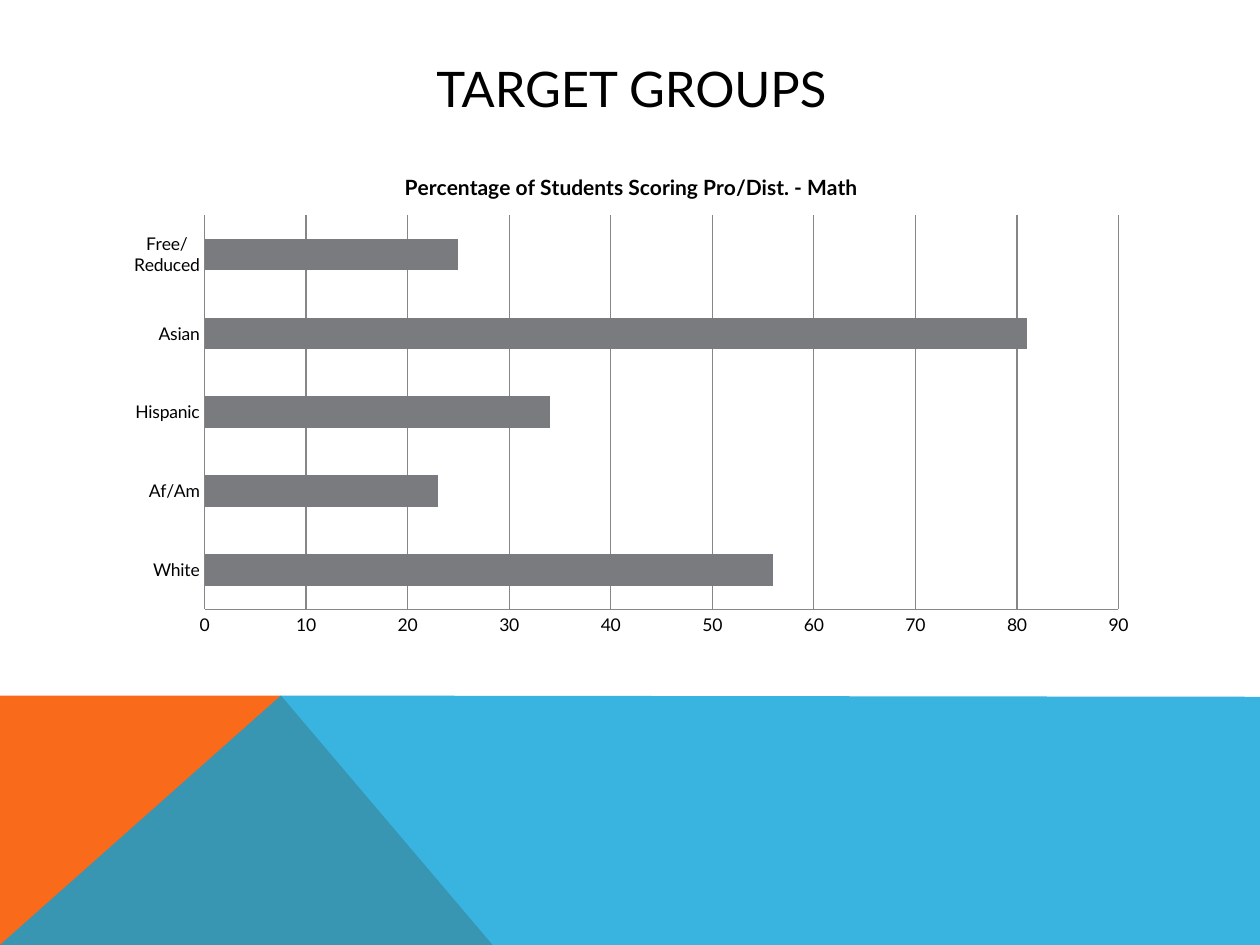
from lxml.etree import SubElement
from pptx import Presentation
from pptx.chart.data import CategoryChartData
from pptx.dml.color import RGBColor
from pptx.enum.chart import XL_CHART_TYPE, XL_TICK_MARK
from pptx.enum.text import MSO_ANCHOR, PP_ALIGN
from pptx.oxml.ns import qn
from pptx.util import Inches, Pt

FONT = "Lato"
COLORS = {
    "text": "000000",
    "orange": "F96A1B",
    "blue": "08A1D9",
    "bar": "797B7E",
    "grid": "868686",
}
SCORES = {
    "White": 56,
    "Af/Am": 23,
    "Hispanic": 34,
    "Asian": 81,
    "Free/Reduced": 25,
}


def color(key):
    """Return the named palette colour."""
    return RGBColor.from_string(COLORS[key])


def style_font(font, size, bold=False):
    """Apply the slide typeface, size and text colour."""
    font.name = FONT
    font.size = Pt(size)
    font.bold = bold
    font.color.rgb = color("text")


def add_band(slide, corners, fill_key, opacity=100):
    """Draw a closed polygon of the footer, optionally translucent."""
    start, *rest = [(Inches(x), Inches(y)) for x, y in corners]
    builder = slide.shapes.build_freeform(*start)
    builder.add_line_segments(rest, close=True)
    band = builder.convert_to_shape()
    band.shadow.inherit = False
    band.line.fill.background()
    band.fill.solid()
    band.fill.fore_color.rgb = color(fill_key)
    if opacity < 100:
        tint = band.fill._xPr.find(".//" + qn("a:srgbClr"))
        SubElement(tint, qn("a:alpha"), val=str(opacity * 1000))


def add_heading(slide, text):
    """Place the centred slide heading."""
    heading = slide.shapes.add_textbox(
        Inches(0.9), Inches(0.4), Inches(8.22), Inches(0.6)
    )
    frame = heading.text_frame
    frame.word_wrap = True
    frame.vertical_anchor = MSO_ANCHOR.MIDDLE
    frame.text = text
    paragraph = frame.paragraphs[0]
    paragraph.alignment = PP_ALIGN.CENTER
    style_font(paragraph.runs[0].font, 28)


def style_axis(axis):
    """Remove tick marks and colour the axis line."""
    axis.major_tick_mark = XL_TICK_MARK.NONE
    axis.minor_tick_mark = XL_TICK_MARK.NONE
    axis.format.line.color.rgb = color("grid")
    axis.format.line.width = Pt(0.75)
    style_font(axis.tick_labels.font, 10)


def add_score_chart(slide, title):
    """Add the bar chart of scores by student group."""
    scores = CategoryChartData()
    scores.categories = list(SCORES)
    scores.add_series("Series 1", list(SCORES.values()))
    chart = slide.shapes.add_chart(
        XL_CHART_TYPE.BAR_CLUSTERED,
        Inches(0.9), Inches(1.2), Inches(8.22), Inches(3.92), scores,
    ).chart
    style_font(chart.font, 10)
    chart.has_legend = False
    chart.has_title = True
    chart.chart_title.text_frame.text = title
    title_run = chart.chart_title.text_frame.paragraphs[0].runs[0]
    style_font(title_run.font, 12, bold=True)

    style_axis(chart.category_axis)
    style_axis(chart.value_axis)
    chart.value_axis.minimum_scale = 0
    chart.value_axis.maximum_scale = 90
    chart.value_axis.major_unit = 10
    chart.value_axis.has_major_gridlines = True
    gridline = chart.value_axis.major_gridlines.format.line
    gridline.color.rgb = color("grid")
    gridline.width = Pt(0.75)

    plot = chart.plots[0]
    plot.gap_width = 150
    plot.vary_by_categories = False
    bars = plot.series[0].format
    bars.fill.solid()
    bars.fill.fore_color.rgb = color("bar")


def main():
    """Build and save the target groups slide."""
    presentation = Presentation()
    presentation.slide_width = Inches(10)
    presentation.slide_height = Inches(7.5)
    slide = presentation.slides.add_slide(presentation.slide_layouts[6])

    peak, bottom_left = (2.23, 5.52), (0, 7.5)
    add_band(slide, [bottom_left, (0, 5.52), peak, (3.91, 7.5)], "orange")
    add_band(slide, [bottom_left, peak, (10, 5.53), (10, 7.5)], "blue", 80)
    add_heading(slide, "TARGET GROUPS")
    add_score_chart(slide, "Percentage of Students Scoring Pro/Dist. - Math")

    presentation.save("out.pptx")


if __name__ == "__main__":
    main()
